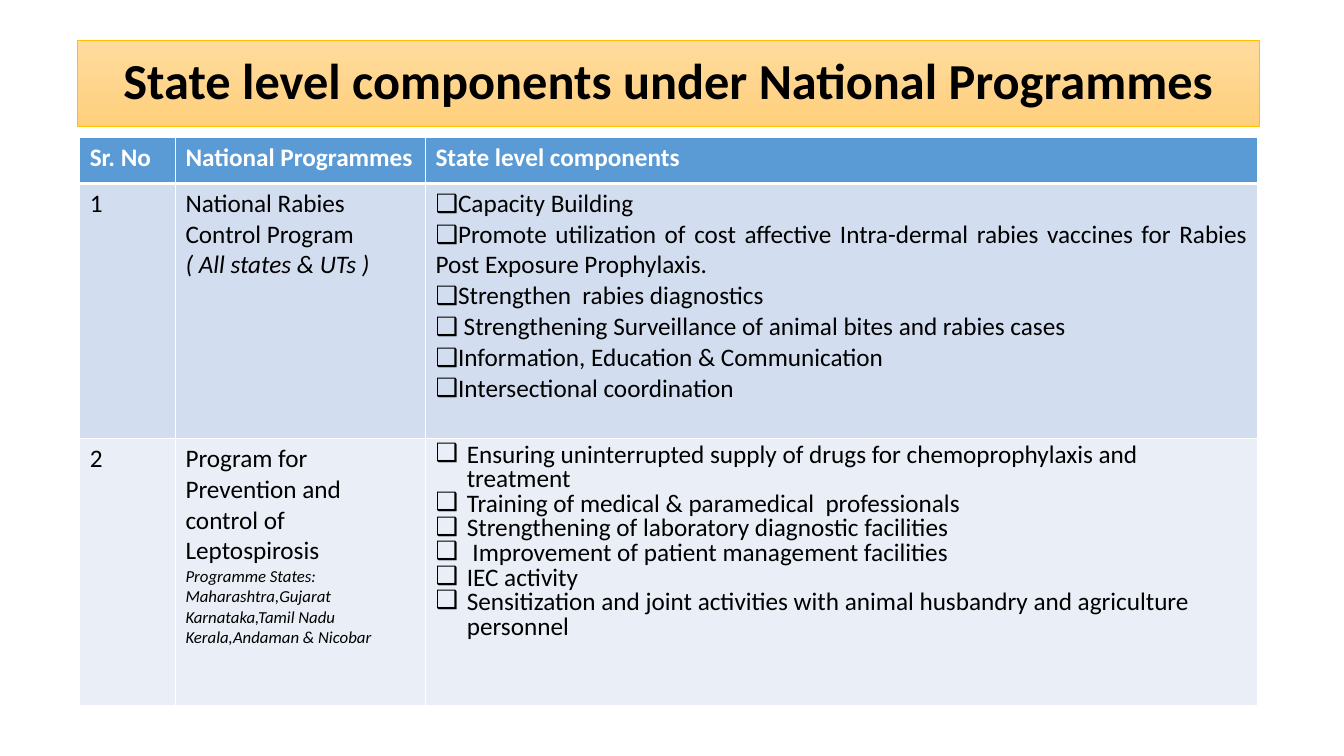
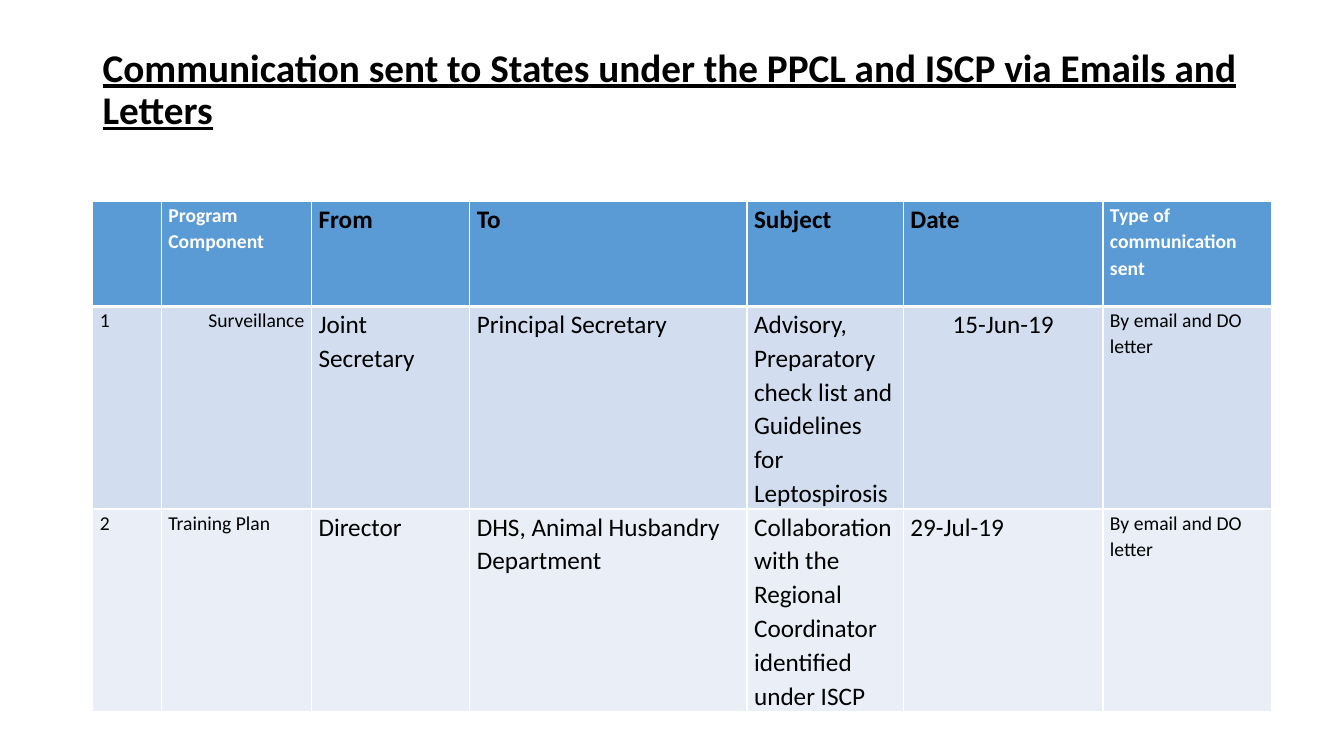
"""Build two slides on state level components and communications of national programmes."""
from dataclasses import dataclass, replace
from typing import Optional, Sequence

from lxml.etree import SubElement
from pptx import Presentation
from pptx.dml.color import RGBColor
from pptx.enum.shapes import MSO_SHAPE as Shape
from pptx.enum.text import MSO_ANCHOR as Anchor, PP_ALIGN as Align
from pptx.oxml.ns import qn
from pptx.util import Inches, Pt


@dataclass(frozen=True)
class Theme:
    font: str = "Calibri"
    ink: str = "000000"
    white: str = "FFFFFF"
    header: str = "5B9BD5"
    bands: tuple[str, str] = ("D2DEEF", "EAEFF7")
    banner_top: str = "FFDB9E"
    banner_bottom: str = "FFD07C"
    banner_edge: str = "FFC000"
    banner_size: float = 36
    heading_size: float = 28
    body_size: float = 18
    small_size: float = 14
    note_size: float = 12
    rule: float = 1
    header_rule: float = 3


THEME = Theme()


@dataclass(frozen=True)
class Line:
    text: str
    size: float = THEME.body_size
    color: str = THEME.ink
    bold: bool = False
    italic: bool = False
    underline: bool = False
    align: Align = Align.LEFT
    spacing: float = 1.0
    bullet_indent: Optional[float] = None


Cell = Sequence[Line]


@dataclass(frozen=True)
class Grid:
    left: float
    top: float
    columns: Sequence[float]
    heights: Sequence[float]
    rows: Sequence[Sequence[Cell]]
    side_inset: float = 0.1
    end_inset: float = 0.05


def add_bullet(paragraph, indent: float) -> None:
    """Give a paragraph a box bullet with a hanging indent."""
    properties = paragraph._p.get_or_add_pPr()
    properties.set("marL", str(Inches(indent)))
    properties.set("indent", str(-Inches(indent)))
    SubElement(properties, qn("a:buFont"), typeface=THEME.font)
    SubElement(properties, qn("a:buChar"), char="❑")


def write_lines(frame, lines: Cell) -> None:
    """Write one styled paragraph for each line."""
    for number, line in enumerate(lines):
        paragraph = frame.add_paragraph() if number else frame.paragraphs[0]
        paragraph.text = line.text
        paragraph.alignment = line.align
        paragraph.line_spacing = line.spacing
        if line.bullet_indent is not None:
            add_bullet(paragraph, line.bullet_indent)
        font = paragraph.font
        font.name = THEME.font
        font.size = Pt(line.size)
        font.bold = line.bold
        font.italic = line.italic
        font.underline = line.underline
        font.color.rgb = RGBColor.from_string(line.color)


def add_borders(cell, top: float, bottom: float) -> None:
    """Draw white rules on the four sides of a cell."""
    properties = cell._tc.get_or_add_tcPr()
    widths = {"L": THEME.rule, "R": THEME.rule, "T": top, "B": bottom}
    for position, (side, width) in enumerate(widths.items()):
        border = SubElement(properties, qn(f"a:ln{side}"), w=str(Pt(width)))
        fill = SubElement(border, qn("a:solidFill"))
        SubElement(fill, qn("a:srgbClr"), val=THEME.white)
        properties.insert(position, border)


def add_grid(slide, grid: Grid) -> None:
    """Add a table with a header row and banded body rows."""
    table = slide.shapes.add_table(
        len(grid.rows), len(grid.columns), Inches(grid.left), Inches(grid.top),
        Inches(sum(grid.columns)), Inches(sum(grid.heights)),
    ).table
    table.first_row = table.horz_banding = False
    for column, width in zip(table.columns, grid.columns):
        column.width = Inches(width)
    for index, (row, height) in enumerate(zip(table.rows, grid.heights)):
        row.height = Inches(height)
        color = THEME.bands[(index - 1) % 2] if index else THEME.header
        top = THEME.header_rule if index == 1 else THEME.rule
        bottom = THEME.rule if index else THEME.header_rule
        for cell, lines in zip(row.cells, grid.rows[index]):
            cell.margin_left = cell.margin_right = Inches(grid.side_inset)
            cell.margin_top = cell.margin_bottom = Inches(grid.end_inset)
            cell.fill.solid()
            cell.fill.fore_color.rgb = RGBColor.from_string(color)
            add_borders(cell, top, bottom)
            write_lines(cell.text_frame, lines)


def add_banner(slide, title: str) -> None:
    """Add a centred title on a gradient band."""
    banner = slide.shapes.add_shape(
        Shape.RECTANGLE, Inches(0.77), Inches(0.4), Inches(11.72), Inches(0.85))
    banner.shadow.inherit = False
    banner.fill.gradient()
    banner.fill.gradient_angle = 270
    shades = (THEME.banner_top, THEME.banner_bottom)
    for stop, shade in zip(banner.fill.gradient_stops, shades):
        stop.color.rgb = RGBColor.from_string(shade)
    banner.line.color.rgb = RGBColor.from_string(THEME.banner_edge)
    banner.line.width = Pt(0.5)
    banner.text_frame.word_wrap = True
    banner.text_frame.vertical_anchor = Anchor.MIDDLE
    write_lines(banner.text_frame, [
        Line(title, THEME.banner_size, bold=True, align=Align.CENTER, spacing=0.9)])


def add_heading(slide, title: str) -> None:
    """Add an underlined title at the top left."""
    heading = slide.shapes.add_textbox(
        Inches(0.92), Inches(0.4), Inches(11.5), Inches(1.45)).text_frame
    heading.word_wrap = True
    heading.vertical_anchor = Anchor.TOP
    heading.margin_top = Inches(0.08)
    write_lines(heading, [
        Line(title, THEME.heading_size, bold=True, underline=True, spacing=0.9)])


def components_grid() -> Grid:
    """Describe the table of programmes and their state components."""
    header = [
        [Line(label, color=THEME.white, bold=True)]
        for label in ("Sr. No", "National Programmes", "State level components")
    ]
    rabies = [
        Line(text, align=Align.JUSTIFY, bullet_indent=0)
        for text in (
            "Capacity Building",
            "Promote utilization of cost affective Intra-dermal rabies vaccines "
            "for Rabies Post Exposure Prophylaxis.",
            "Strengthen  rabies diagnostics",
            " Strengthening Surveillance of animal bites and rabies cases",
            "Information, Education & Communication",
            "Intersectional coordination",
        )
    ]
    leptospirosis = [
        Line(text, spacing=0.8, bullet_indent=0.31)
        for text in (
            "Ensuring uninterrupted supply of drugs for chemoprophylaxis and treatment",
            "Training of medical & paramedical  professionals",
            "Strengthening of laboratory diagnostic facilities",
            " Improvement of patient management facilities",
            "IEC activity",
            "Sensitization and joint activities with animal husbandry and "
            "agriculture personnel",
        )
    ]
    states = [
        Line(text, THEME.note_size, italic=True)
        for text in ("Programme States:", "Maharashtra,Gujarat",
                     "Karnataka,Tamil Nadu", "Kerala,Andaman & Nicobar")
    ]
    rabies_program = [Line("National Rabies Control Program"),
                      Line("( All states & UTs )", italic=True)]
    leptospirosis_program = [
        Line("Program for Prevention and control of Leptospirosis"), *states]
    return Grid(0.79, 1.36, (0.95, 2.48, 8.25), (0.46, 2.53, 2.65), (
        header,
        ([Line("1")], rabies_program, rabies),
        ([Line("2")], leptospirosis_program, leptospirosis),
    ))


def communications_grid() -> Grid:
    """Describe the table of communications sent to states."""
    entries = (
        ("", "Program Component", "From", "To", "Subject", "Date",
         "Type of communication sent"),
        ("1", "Surveillance", "Joint Secretary", "Principal Secretary",
         "Advisory, Preparatory check list and Guidelines for Leptospirosis",
         "15-Jun-19", "By email and DO letter"),
        ("2", "Training Plan", "Director", "DHS, Animal Husbandry Department",
         "Collaboration with the Regional Coordinator identified under ISCP",
         "29-Jul-19", "By email and DO letter"),
    )
    small_columns = {0, 1, 6}
    alignments = {"Surveillance": Align.RIGHT, "15-Jun-19": Align.CENTER}
    rows = []
    for index, entry in enumerate(entries):
        cells = []
        for column, text in enumerate(entry):
            small = column in small_columns
            line = Line(text, THEME.small_size if small else THEME.body_size,
                        align=alignments.get(text, Align.LEFT), spacing=1.1)
            if index == 0:
                color = THEME.white if small else THEME.ink
                line = replace(line, bold=True, color=color)
            cells.append([line])
        rows.append(cells)
    return Grid(0.92, 2, (0.68, 1.49, 1.57, 2.75, 1.55, 1.98, 1.67),
                (1.04, 2.01, 2.01), rows, side_inset=0.07, end_inset=0)


def main() -> None:
    """Build and save the presentation."""
    deck = Presentation()
    deck.slide_width, deck.slide_height = Inches(13.33), Inches(7.5)
    blank = deck.slide_layouts[6]

    components = deck.slides.add_slide(blank)
    add_banner(components, "State level components under National Programmes")
    add_grid(components, components_grid())

    communications = deck.slides.add_slide(blank)
    add_heading(communications, "Communication sent to States under the PPCL "
                                "and ISCP via Emails and Letters")
    add_grid(communications, communications_grid())
    deck.save("out.pptx")


if __name__ == "__main__":
    main()
